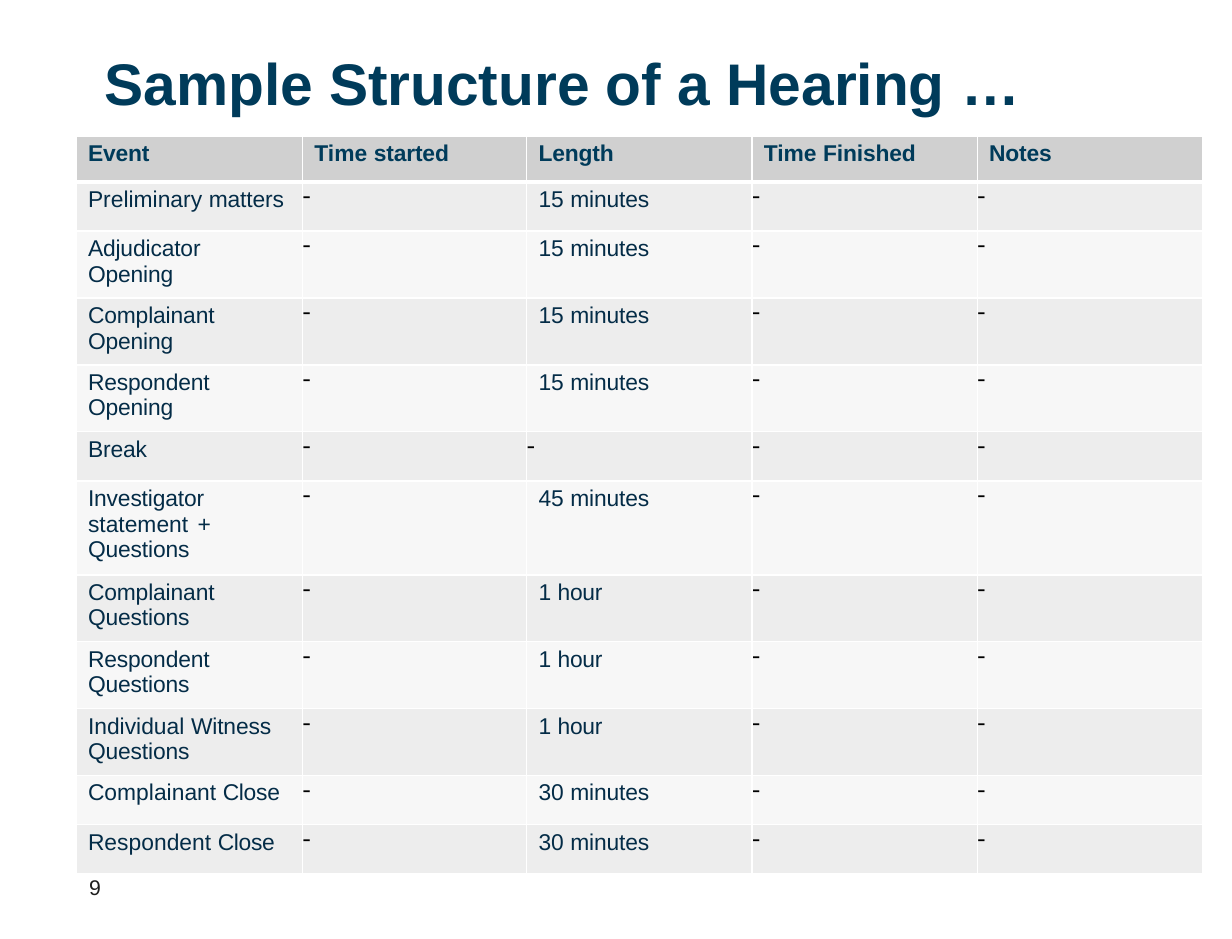
from pptx import Presentation
from pptx.dml.color import RGBColor
from pptx.enum.text import MSO_ANCHOR, MSO_AUTO_SIZE, PP_ALIGN
from pptx.oxml.ns import qn
from pptx.util import Inches, Pt
from lxml import etree

TOP = MSO_ANCHOR.TOP
FIXED = MSO_AUTO_SIZE.NONE
LEFT = PP_ALIGN.LEFT
BOTH = PP_ALIGN.JUSTIFY

TEAL = RGBColor(0x00, 0x3B, 0x5A)
NAVY = RGBColor(0x04, 0x2C, 0x47)
INK = RGBColor(0x1E, 0x1E, 0x1E)
BLACK = RGBColor(0x00, 0x00, 0x00)
WHITE = RGBColor(0xFF, 0xFF, 0xFF)
GREY = RGBColor(0xD0, 0xD0, 0xD0)
BANDS = [RGBColor(0xF7, 0xF7, 0xF7), RGBColor(0xED, 0xED, 0xED)]

SANS = "Arial"
SERIF = "Times New Roman"
SPACING = {"hour": -20, "Close": -20, "+ ": -50, "Investigator ": -10, "…": -50}

WIDTHS = [1.93, 1.91, 1.92, 1.92, 1.92]
HEADS = ["Event", "Time |started", "Length", "Time |Finished", "Notes"]
HEAD_HIGH = 0.39
ROWS = [
    ("Preliminary |matters", "15 |minutes", 0.42),
    ("Adjudicator Opening", "15 |minutes", 0.57),
    ("Complainant\nOpening", "15 |minutes", 0.57),
    ("Respondent Opening", "15 |minutes", 0.57),
    ("Break", "-", 0.42),
    ("Investigator |statement |+ |Questions", "45 |minutes", 0.8),
    ("Complainant Questions", "1 |hour", 0.57),
    ("Respondent\nQuestions", "1 |hour", 0.57),
    ("Individual |Witness Questions", "1 |hour", 0.57),
    ("Complainant |Close", "30 |minutes", 0.42),
    ("Respondent |Close", "30 |minutes", 0.42),
]


def add_runs(par, text, size, color, bold=False, face=SANS):
    """Add the runs of one paragraph, parted by bars."""
    for part in text.split("|"):
        run = par.add_run()
        run.text = part
        font = run.font
        font.name, font.size, font.bold = face, Pt(size), bold
        font.color.rgb = color
        gap = SPACING.get(part, 0 if part.endswith((" ", "-")) else -10)
        run._r.get_or_add_rPr().set("spc", str(gap))


def indent(par, left):
    """Set the left indent of a paragraph."""
    props = par._p.get_or_add_pPr()
    props.set("marL", str(Inches(left)))
    props.set("indent", "0")


def set_frame(frame, top=0):
    """Give a text frame a fixed size and tight margins."""
    frame.auto_size = FIXED
    frame.word_wrap = True
    frame.vertical_anchor = TOP
    frame.margin_left = frame.margin_right = frame.margin_bottom = 0
    frame.margin_top = Inches(top)


def add_rules(cell, row):
    """Draw white cell borders, thick below the header."""
    props = cell._tc.get_or_add_tcPr()
    thick = {"lnB": 0, "lnT": 1}
    for side in ("lnL", "lnR", "lnT", "lnB"):
        width = 3 if thick.get(side) == row else 1
        line = etree.SubElement(props, qn("a:" + side), w=str(Pt(width)))
        fill = etree.SubElement(line, qn("a:solidFill"))
        etree.SubElement(fill, qn("a:srgbClr"), val=str(WHITE))


def fill_cell(cell, text, row, right):
    """Style and fill one table cell."""
    head, blank = row == 0, text == "-"
    add_rules(cell, row)
    cell.fill.solid()
    cell.fill.fore_color.rgb = GREY if head else BANDS[row % 2]
    cell.margin_left = cell.margin_bottom = 0
    cell.margin_top = 0 if blank else Inches(0.04)
    cell.margin_right = Inches(right)
    cell.vertical_anchor = TOP
    frame = cell.text_frame
    for num, line in enumerate(text.split("\n")):
        par = frame.add_paragraph() if num else frame.paragraphs[0]
        if blank:
            add_runs(par, line, 15, BLACK, face=SERIF)
            continue
        indent(par, 0.1)
        par.alignment = BOTH if "+" in line else LEFT
        add_runs(par, line, 14, TEAL if head else NAVY, head)


def add_title(slide):
    """Place the slide title."""
    title = slide.shapes.title
    title.left, title.top = Inches(0.88), Inches(0.32)
    title.width, title.height = Inches(7.83), Inches(0.63)
    set_frame(title.text_frame, 0.08)
    par = title.text_frame.paragraphs[0]
    par.alignment = LEFT
    indent(par, 0.01)
    add_runs(par, "Sample Structure of a Hearing |…", 36, TEAL, True)


def add_plan(slide):
    """Add the table of hearing events."""
    highs = [HEAD_HIGH] + [high for _, _, high in ROWS]
    texts = [HEADS] + [[event, "-", length, "-", "-"] for event, length, _ in ROWS]
    table = slide.shapes.add_table(
        len(texts), len(WIDTHS), Inches(0.65), Inches(1.16),
        Inches(sum(WIDTHS)), Inches(sum(highs))).table
    table.horz_banding = False
    for col, width in zip(table.columns, WIDTHS):
        col.width = Inches(width)
    for row, (high, line) in enumerate(zip(highs, texts)):
        table.rows[row].height = Inches(high)
        for col, text in enumerate(line):
            right = 0 if col else 0.79 if "+" in text else 0.13
            fill_cell(table.cell(row, col), text, row, right)


def add_number(slide):
    """Add the page number."""
    box = slide.shapes.add_textbox(
        Inches(0.72), Inches(7.45), Inches(0.3), Inches(0.23))
    set_frame(box.text_frame)
    par = box.text_frame.paragraphs[0]
    indent(par, 0.04)
    par.line_spacing = Pt(15.3)
    add_runs(par, "9", 13, INK)


def main():
    """Build and save the slide."""
    deck = Presentation()
    deck.slide_width, deck.slide_height = Inches(10.5), Inches(8)
    slide = deck.slides.add_slide(deck.slide_layouts[5])
    add_title(slide)
    add_plan(slide)
    add_number(slide)
    deck.save("out.pptx")


if __name__ == "__main__":
    main()
